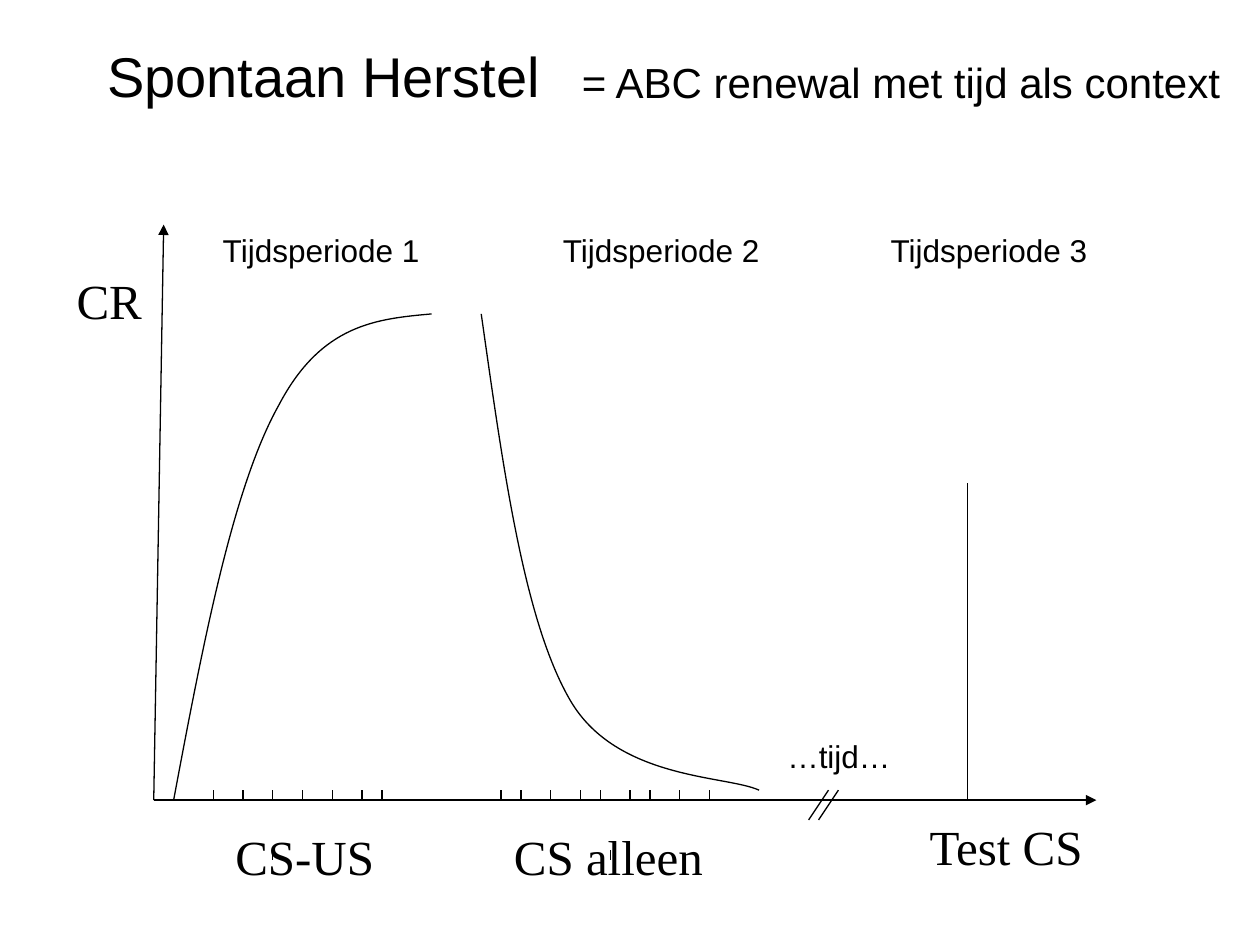
from dataclasses import dataclass
from typing import Any

from lxml import etree
from pptx import Presentation
from pptx.dml.color import RGBColor
from pptx.enum.shapes import MSO_CONNECTOR
from pptx.oxml.ns import qn
from pptx.util import Pt

LINE = MSO_CONNECTOR.STRAIGHT


@dataclass(frozen=True)
class Theme:
    ink: RGBColor = RGBColor(0, 0, 0)
    sans: str = "Arial"
    serif: str = "Times New Roman"
    title: float = 32
    term: float = 28
    note: float = 24
    label: float = 18
    stroke: float = 0.75


@dataclass(frozen=True)
class Label:
    text: str
    left: float
    top: float
    width: float
    height: float
    size: float
    font: str


@dataclass(frozen=True)
class Stroke:
    """A line between two points of the graph grid."""
    x1: float
    y1: float
    x2: float
    y2: float
    arrow: bool = False


THEME = Theme()
UNIT = 5.67                   # one grid step of the graph
ORIGIN = (87.87, 457.2)       # where the two axes meet

LABELS = [
    *(Label(text, left, top, width, 41, THEME.term, THEME.serif)
      for text, left, top, width in (
          ("CR", 36.7, 151.2, 51.8), ("CS-US", 127.4, 468.7, 94.3),
          ("CS alleen", 286.6, 468.7, 122.4), ("Test CS", 524.2, 463, 103.7))),
    *(Label(f"Tijdsperiode {i}", left, 128.2, 128.2, 28.8,
            THEME.label, THEME.sans)
      for i, left in enumerate((120.2, 314.6, 501.8), 1)),
    Label("…tijd…", 442.8, 417.6, 74.2, 28.8, THEME.label, THEME.sans),
    Label("= ABC renewal met tijd als context", 325.4, 28.8, 383, 36.7,
          THEME.note, THEME.sans),
]

TRIALS = (6, 9, 12, 15, 18, 21, 23, 35, 37, 40, 43, 45, 48, 50, 53, 56)
STROKES = [
    Stroke(0, 0, 1, -58, arrow=True),
    Stroke(0, 0, 95, 0, arrow=True),
    Stroke(82, 0, 82, -32),
    *(Stroke(x, 0, x, -1) for x in TRIALS),
    *(Stroke(x, 6, x, 5) for x in (12, 46)),
    *(Stroke(x, 2, x + 2, -1) for x in (66, 67)),
]

# Start point, then two control points and an end point per segment
GAIN = [(2, 0), (5, -16), (8, -31.6), (12.6, -39.8),
        (16.9, -48), (22.5, -48.5), (28, -49)]
LOSS = [(33, -49), (35.2, -33.5), (37.3, -18), (42, -10),
        (46.7, -2), (57.8, -2.5), (61, -1)]


def grid(x: float, y: float) -> tuple[Pt, Pt]:
    return Pt(ORIGIN[0] + x * UNIT), Pt(ORIGIN[1] + y * UNIT)


def set_all(target: Any, values: dict[str, Any]) -> None:
    for name, value in values.items():
        setattr(target, name, value)


def write(frame: Any, text: str, size: float, font: str) -> None:
    run = frame.paragraphs[0].add_run()
    run.text = text
    set_all(run.font, {"size": Pt(size), "name": font})
    run.font.color.rgb = THEME.ink


def ink(line: Any) -> None:
    line.width = Pt(THEME.stroke)
    line.fill.solid()
    line.fill.fore_color.rgb = THEME.ink


def add_label(shapes: Any, item: Label) -> None:
    box = shapes.add_textbox(Pt(item.left), Pt(item.top),
                             Pt(item.width), Pt(item.height))
    box.text_frame.word_wrap = False
    write(box.text_frame, item.text, item.size, item.font)


def add_stroke(shapes: Any, item: Stroke) -> None:
    line = shapes.add_connector(LINE, *grid(item.x1, item.y1),
                                *grid(item.x2, item.y2))
    ink(line.line)
    props = line._element.spPr
    if item.arrow:
        etree.SubElement(props.find(qn("a:ln")), qn("a:tailEnd"),
                         type="triangle")
    etree.SubElement(props, qn("a:effectLst"))


def add_curve(shapes: Any, points: list[tuple[float, float]]) -> None:
    """Draw Bezier segments by regrouping the freeform's points in threes."""
    pen = shapes.build_freeform(*grid(*points[0]))
    pen.add_line_segments([grid(*p) for p in points[1:]], close=False)
    curve = pen.convert_to_shape()
    curve.shadow.inherit = False
    curve.fill.background()
    ink(curve.line)
    steps = list(curve._element.iter(qn("a:lnTo")))
    for i in range(0, len(steps), 3):
        arc = etree.Element(qn("a:cubicBezTo"))
        steps[i].addprevious(arc)
        for step in steps[i:i + 3]:
            arc.append(step[0])
            step.getparent().remove(step)


def add_title(slide: Any, text: str) -> None:
    """Put the heading in the body placeholder, without a bullet."""
    empty = slide.shapes.title._element
    empty.getparent().remove(empty)
    body = slide.placeholders[1]
    set_all(body, {"left": Pt(54), "top": Pt(20.2),
                   "width": Pt(612), "height": Pt(459.4)})
    write(body.text_frame, text, THEME.title, THEME.sans)
    props = body.text_frame.paragraphs[0]._p.get_or_add_pPr()
    props.set("marL", str(Pt(27)))
    props.set("indent", str(Pt(-27)))
    etree.SubElement(props, qn("a:buNone"))


def main() -> None:
    deck = Presentation()
    set_all(deck, {"slide_width": Pt(720), "slide_height": Pt(540)})
    slide = deck.slides.add_slide(deck.slide_layouts[1])
    add_title(slide, "Spontaan Herstel")
    for item in STROKES:
        add_stroke(slide.shapes, item)
    for points in (GAIN, LOSS):
        add_curve(slide.shapes, points)
    for item in LABELS:
        add_label(slide.shapes, item)
    deck.save("out.pptx")


if __name__ == "__main__":
    main()
